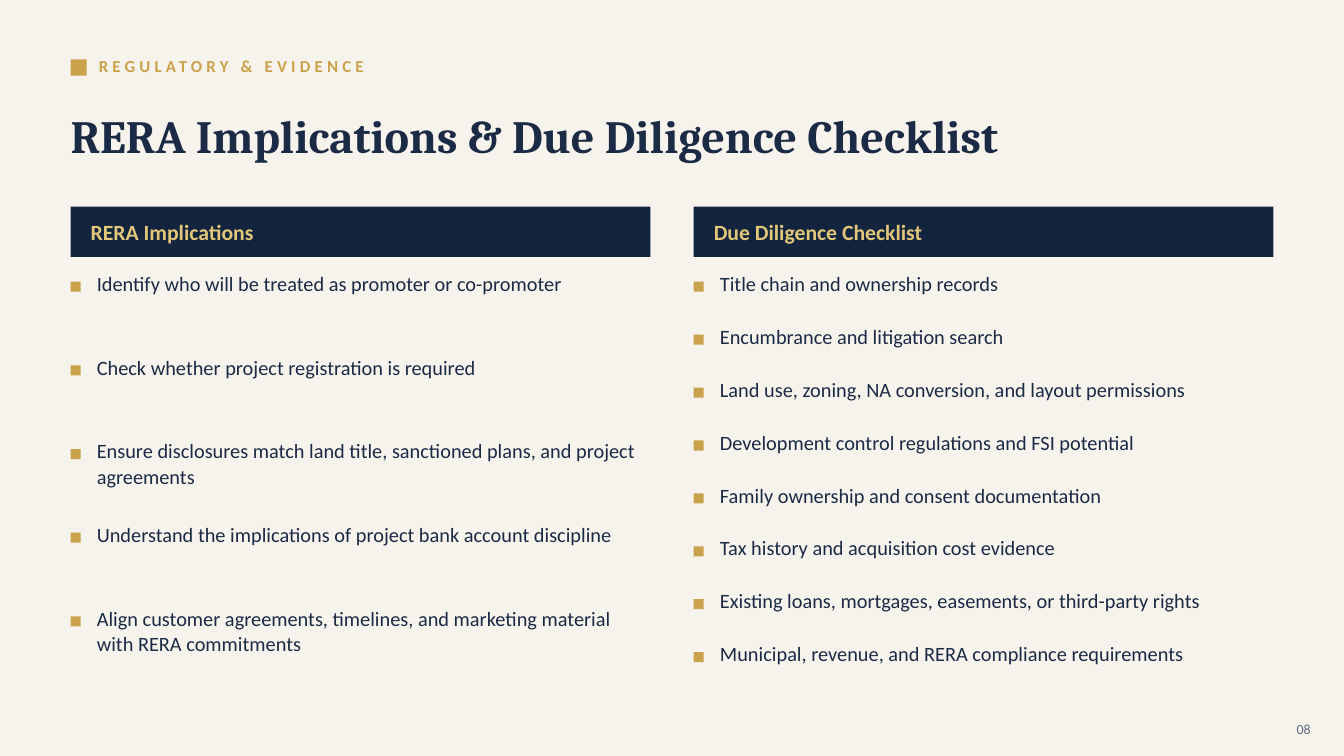
"""Build the RERA implications and due diligence checklist slide."""
import pptx
import pptx.dml.color
import pptx.enum.shapes
import pptx.enum.text
import pptx.util

Inches = pptx.util.Inches
RGBColor = pptx.dml.color.RGBColor
ANCHOR = pptx.enum.text.MSO_ANCHOR
ALIGN = pptx.enum.text.PP_ALIGN

CREAM = RGBColor(0xF6, 0xF3, 0xEC)
GOLD = RGBColor(0xC9, 0xA2, 0x4B)
PALE_GOLD = RGBColor(0xE2, 0xC7, 0x79)
NAVY = RGBColor(0x13, 0x24, 0x3F)
INK = RGBColor(0x1B, 0x2A, 0x45)
SLATE = RGBColor(0x5C, 0x6B, 0x82)

COLUMN_WIDTH = 5.75
HEADER_TOP = 2.05
HEADER_HEIGHT = 0.5
LIST_TOP = 2.68
MARKER_DROP = 0.115
TEXT_INDENT = 0.26

COLUMNS = [
    (0.7, 0.83, "RERA Implications", [
        "Identify who will be treated as promoter or co-promoter",
        "Check whether project registration is required",
        "Ensure disclosures match land title, sanctioned plans, and project agreements",
        "Understand the implications of project bank account discipline",
        "Align customer agreements, timelines, and marketing material with RERA commitments",
    ]),
    (6.88, 0.525, "Due Diligence Checklist", [
        "Title chain and ownership records",
        "Encumbrance and litigation search",
        "Land use, zoning, NA conversion, and layout permissions",
        "Development control regulations and FSI potential",
        "Family ownership and consent documentation",
        "Tax history and acquisition cost evidence",
        "Existing loans, mortgages, easements, or third-party rights",
        "Municipal, revenue, and RERA compliance requirements",
    ]),
]


def add_rect(s, left, top, width, height, color):
    """Add a plain filled rectangle."""
    sp = s.shapes.add_shape(pptx.enum.shapes.MSO_SHAPE.RECTANGLE, Inches(left),
                            Inches(top), Inches(width), Inches(height))
    sp.shadow.inherit = False
    sp.fill.solid()
    sp.fill.fore_color.rgb = color
    sp.line.fill.background()


def write_text(sp, text, size, color, bold=False, font="Calibri",
               anchor=ANCHOR.MIDDLE, align=ALIGN.LEFT):
    """Write one formatted run into a shape without insets and return it."""
    tf = sp.text_frame
    tf.word_wrap = True
    tf.auto_size = pptx.enum.text.MSO_AUTO_SIZE.NONE
    tf.margin_left = tf.margin_top = tf.margin_right = tf.margin_bottom = 0
    tf.vertical_anchor = anchor
    p = tf.paragraphs[0]
    p.alignment = align
    r = p.add_run()
    r.text = text
    r.font.name = font
    r.font.size = pptx.util.Pt(size)
    r.font.bold = bold
    r.font.color.rgb = color
    return r


def add_text(s, left, top, width, height, text, size, color, **style):
    """Add a text box and return it."""
    sp = s.shapes.add_textbox(Inches(left), Inches(top), Inches(width), Inches(height))
    write_text(sp, text, size, color, **style)
    return sp


def add_title(s, text):
    """Place and format the title placeholder."""
    sp = s.shapes.title
    sp.left, sp.top = Inches(0.7), Inches(0.88)
    sp.width, sp.height = Inches(11.95), Inches(0.92)
    write_text(sp, text, 33, INK, bold=True, font="Cambria")


def add_eyebrow(s, text):
    """Add the gold square and the letter-spaced section label."""
    add_rect(s, 0.7, 0.59, 0.16, 0.16, GOLD)
    sp = add_text(s, 0.98, 0.48, 9, 0.34, text, 12, GOLD, bold=True)
    r = sp.text_frame.paragraphs[0].runs[0]
    r.font._element.set("spc", "300")


def add_column(s, left, pitch, heading, items):
    """Add a header bar with its evenly spaced list below."""
    add_rect(s, left, HEADER_TOP, COLUMN_WIDTH, HEADER_HEIGHT, NAVY)
    add_text(s, left + 0.2, HEADER_TOP, 5.4, HEADER_HEIGHT, heading, 15.5,
             PALE_GOLD, bold=True)
    for i, item in enumerate(items):
        top = LIST_TOP + i * pitch
        add_rect(s, left, top + MARKER_DROP, 0.1, 0.1, GOLD)
        sp = add_text(s, left + TEXT_INDENT, top, COLUMN_WIDTH - TEXT_INDENT, pitch,
                      item, 14.5, INK, anchor=ANCHOR.TOP)
        sp.text_frame.paragraphs[0].line_spacing = 1.04


def main():
    """Build and save the slide."""
    prs = pptx.Presentation()
    prs.slide_width, prs.slide_height = Inches(13.33), Inches(7.5)
    s = prs.slides.add_slide(prs.slide_layouts[5])
    s.background.fill.solid()
    s.background.fill.fore_color.rgb = CREAM
    add_eyebrow(s, "REGULATORY & EVIDENCE")
    add_title(s, "RERA Implications & Due Diligence Checklist")
    for column in COLUMNS:
        add_column(s, *column)
    add_text(s, 12.4, 7.08, 0.6, 0.3, "08", 10, SLATE, align=ALIGN.RIGHT)
    prs.save("out.pptx")


if __name__ == "__main__":
    main()
